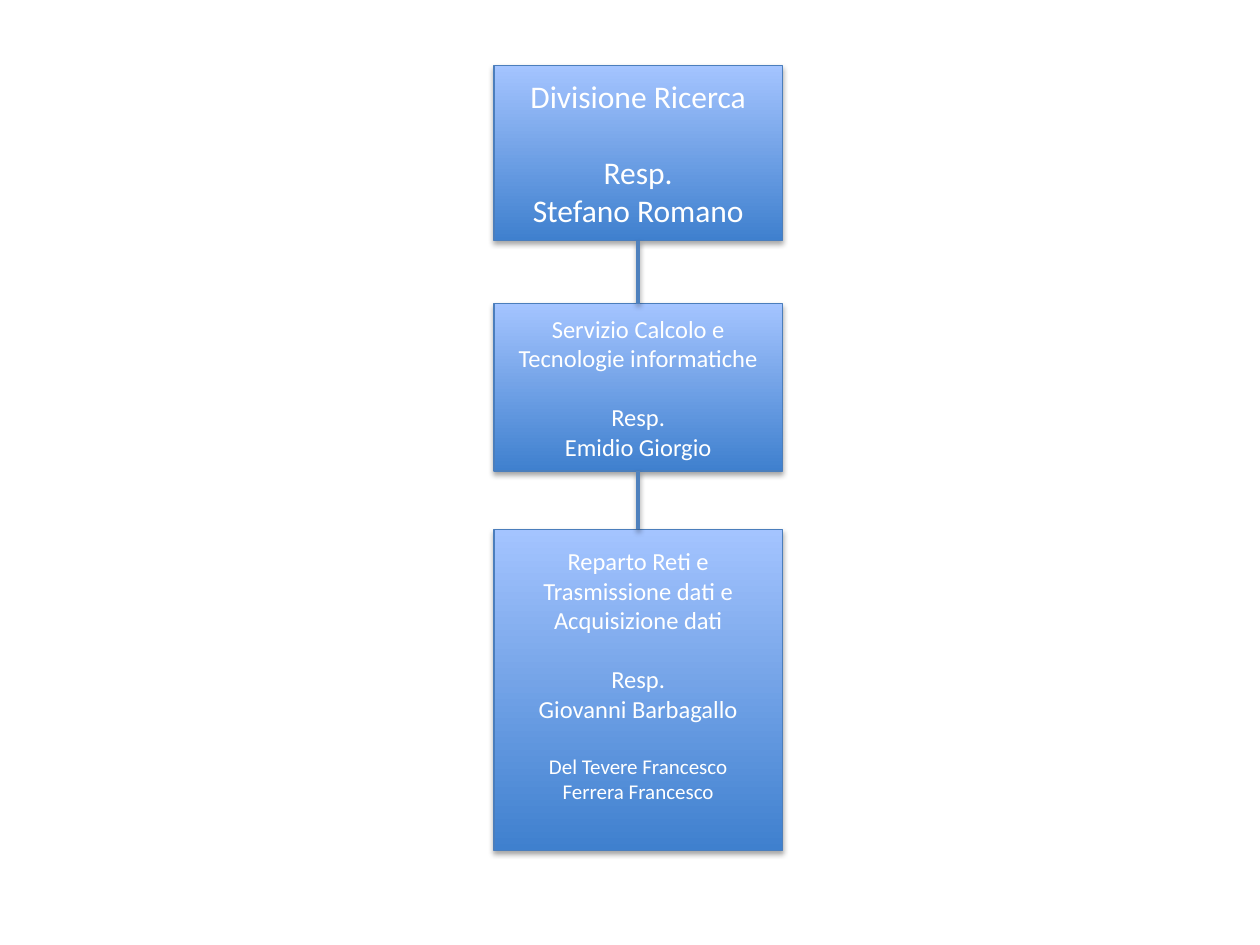
"""Build a one-slide organisation chart of three linked boxes."""
from dataclasses import dataclass

from lxml import etree
from pptx import Presentation
from pptx.dml.color import RGBColor
from pptx.enum import shapes, text
from pptx.oxml import ns
from pptx.util import Pt

HUES = {"low": "3F80CE", "high": "A4C4FF", "edge": "4B7EBC",
        "link": "4F81BD", "text": "FFFFFF", "shade": "000000"}
LEFT, WIDTH = 282.24, 164.88
LEAD = 1.22


@dataclass
class Group:
    """Lines of one size, set apart from the group above by a gap."""
    lines: list[str]
    size: float
    gap: float = 0


@dataclass
class Unit:
    """One box of the chart."""
    top: float
    height: float
    groups: list[Group]
    foot: float = 3.6


UNITS = [
    Unit(37.44, 100.08, [
        Group(["Divisione Ricerca"], 18),
        Group(["Resp.", "Stefano Romano"], 18, 18 * LEAD)]),
    Unit(173.52, 95.76, [
        Group(["Servizio Calcolo e", "Tecnologie informatiche"], 14),
        Group(["Resp.", "Emidio Giorgio"], 14, 14 * LEAD)]),
    Unit(302.4, 183.6, [
        Group(["Reparto Reti e", "Trasmissione dati e", "Acquisizione dati"], 14),
        Group(["Resp.", "Giovanni Barbagallo"], 14, 14 * LEAD),
        Group(["Del Tevere Francesco", "Ferrera Francesco"], 12, 14 * LEAD)],
        3.6 + 14 * LEAD),
]


def hue(name: str) -> RGBColor:
    """Return a named colour."""
    return RGBColor.from_string(HUES[name])


def apply(item, form: dict) -> None:
    """Set each attribute of a format."""
    for key, value in form.items():
        setattr(item, key, value)


def shade(item, alpha: int, dist: float) -> None:
    """Give a shape or connector a soft shadow straight below it."""
    props = item._element.spPr
    for old in props.findall(ns.qn("a:effectLst")):
        props.remove(old)
    fx = etree.SubElement(props, ns.qn("a:effectLst"))
    outer = etree.SubElement(
        fx, ns.qn("a:outerShdw"), blurRad=str(Pt(3.1)), dist=str(Pt(dist)),
        dir="5400000", rotWithShape="0")
    tint = etree.SubElement(outer, ns.qn("a:srgbClr"), val=HUES["shade"])
    etree.SubElement(tint, ns.qn("a:alpha"), val=str(alpha * 1000))


def write(frame, groups: list[Group]) -> None:
    """Fill a text frame with centred groups of lines."""
    rows = [(line, group.size, 0 if i else group.gap)
            for group in groups for i, line in enumerate(group.lines)]
    for i, (line, size, gap) in enumerate(rows):
        para = frame.add_paragraph() if i else frame.paragraphs[0]
        para.text = line
        para.alignment = text.PP_ALIGN.CENTER
        if gap:
            para.space_before = Pt(gap)
        apply(para.font, {"name": "Calibri", "size": Pt(size)})
        para.font.color.rgb = hue("text")


def draw(slide, unit: Unit):
    """Draw one box and return it."""
    box = slide.shapes.add_shape(
        shapes.MSO_SHAPE.RECTANGLE, Pt(LEFT), Pt(unit.top),
        Pt(WIDTH), Pt(unit.height))
    box.fill.gradient()
    box.fill.gradient_angle = 90
    for stop, name in zip(box.fill.gradient_stops, ("low", "high")):
        apply(stop, {"position": 0 if name == "low" else 1})
        stop.color.rgb = hue(name)
    box.line.color.rgb = hue("edge")
    box.line.width = Pt(0.75)
    shade(box, 35, 1.8)
    apply(box.text_frame, {
        "word_wrap": True, "vertical_anchor": text.MSO_ANCHOR.MIDDLE,
        "margin_bottom": Pt(unit.foot)})
    write(box.text_frame, unit.groups)
    return box


def link(slide, upper, lower) -> None:
    """Join the bottom of one box to the top of the next."""
    line = slide.shapes.add_connector(shapes.MSO_CONNECTOR.STRAIGHT, 0, 0, 0, 0)
    line.begin_connect(upper, 2)
    line.end_connect(lower, 0)
    line.line.color.rgb = hue("link")
    line.line.width = Pt(2)
    shade(line, 38, 1.6)


def main() -> None:
    """Build and save the deck."""
    deck = Presentation()
    apply(deck, {"slide_width": Pt(720), "slide_height": Pt(540)})
    slide = deck.slides.add_slide(deck.slide_layouts[6])
    boxes = [draw(slide, unit) for unit in UNITS]
    for upper, lower in zip(boxes, boxes[1:]):
        link(slide, upper, lower)
    deck.save("out.pptx")


if __name__ == "__main__":
    main()
